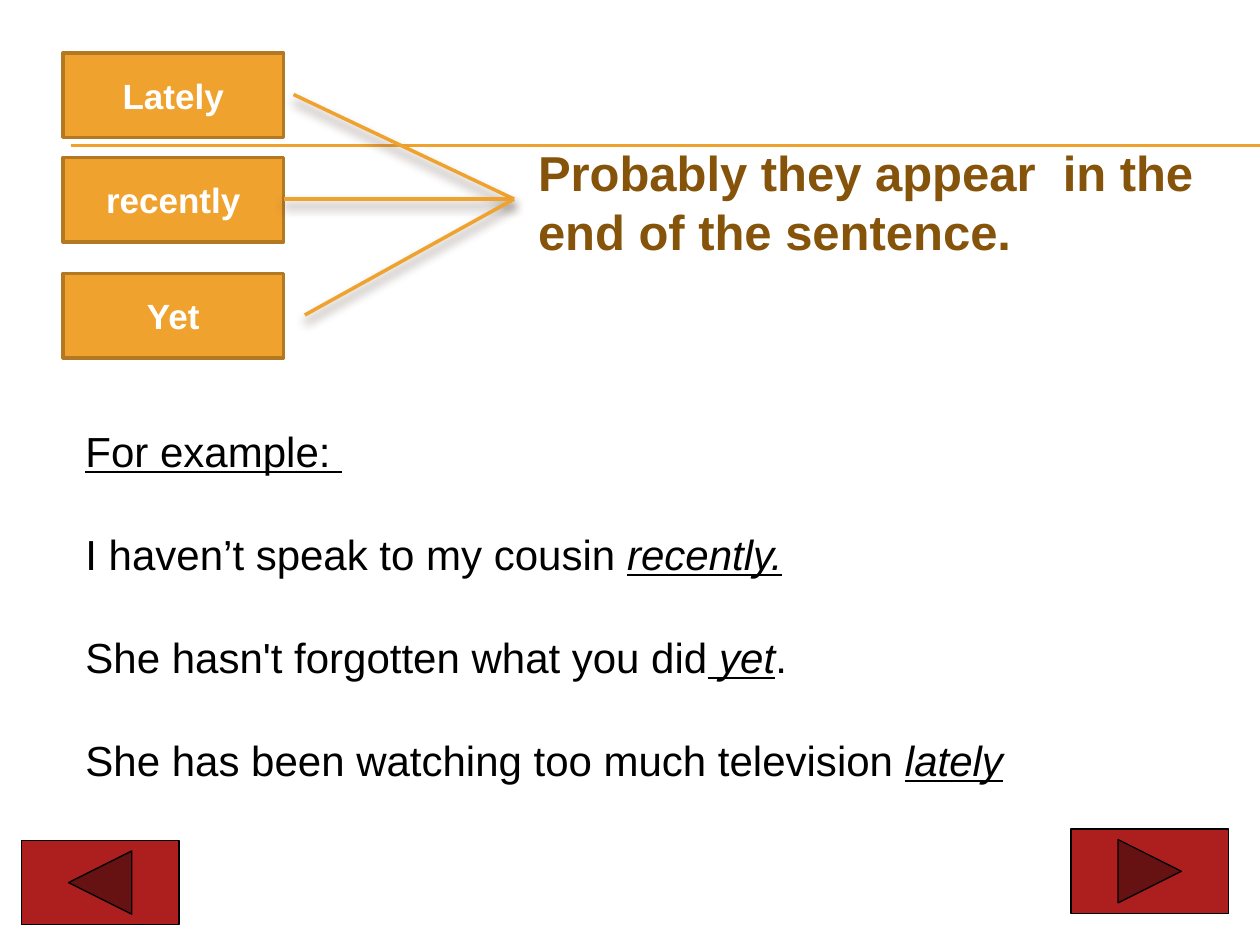
from lxml import etree
from pptx import Presentation
from pptx.dml.color import RGBColor
from pptx.enum.shapes import MSO_CONNECTOR, MSO_SHAPE
from pptx.enum.text import MSO_ANCHOR, PP_ALIGN
from pptx.oxml.ns import qn
from pptx.util import Inches, Pt

STRAIGHT = MSO_CONNECTOR.STRAIGHT
RECTANGLE = MSO_SHAPE.RECTANGLE
NEXT_BUTTON = MSO_SHAPE.ACTION_BUTTON_FORWARD_OR_NEXT
BACK_BUTTON = MSO_SHAPE.ACTION_BUTTON_BACK_OR_PREVIOUS
TOP, MIDDLE = MSO_ANCHOR.TOP, MSO_ANCHOR.MIDDLE
LEFT, CENTER = PP_ALIGN.LEFT, PP_ALIGN.CENTER

ORANGE = RGBColor(0xF0, 0xA2, 0x2E)
DARK_ORANGE = RGBColor(0xB2, 0x78, 0x22)
BROWN = RGBColor(0x85, 0x54, 0x0A)
SHADOW = RGBColor(0x4E, 0x3B, 0x30)
RED = RGBColor(0xAD, 0x1F, 0x1F)
BLACK = RGBColor(0, 0, 0)
WHITE = RGBColor(0xFF, 0xFF, 0xFF)

EMPHASIS = {"italic": True, "underline": True}
EXAMPLES = [
    [("For example: ", {"underline": True})],
    [("I haven’t speak to my cousin ", {}), ("recently.", EMPHASIS)],
    [("She hasn't forgotten what you did", {}), (" yet", EMPHASIS), (".", {})],
    [("She has been watching too much television ", {}), ("lately", EMPHASIS)],
]


def add_text(p, text, size, color, bold=False, italic=False, underline=False, align=LEFT):
    p.alignment = align
    r = p.add_run()
    r.text = text
    font = r.font
    font.name, font.size = "Arial", Pt(size)
    font.bold, font.italic, font.underline = bold, italic, underline
    font.color.rgb = color


def add_box(slide, kind, box, fill, line, width):
    sp = slide.shapes.add_shape(kind, *map(Inches, box))
    sp.shadow.inherit = False
    sp.fill.solid()
    sp.fill.fore_color.rgb = fill
    sp.line.color.rgb = line
    sp.line.width = Pt(width)
    return sp


def add_line(slide, start, end, width, shadow=False):
    line = slide.shapes.add_connector(STRAIGHT, *map(Inches, (*start, *end)))
    line.line.color.rgb = ORANGE
    line.line.width = Pt(width)
    effects = etree.SubElement(line._element.spPr, qn("a:effectLst"))
    if shadow:
        outer = etree.SubElement(effects, qn("a:outerShdw"), blurRad=str(Pt(6)),
                                 dist=str(Pt(4)), dir="5400000", rotWithShape="0")
        color = etree.SubElement(outer, qn("a:srgbClr"), val=str(SHADOW))
        etree.SubElement(color, qn("a:alpha"), val="60000")


def add_rule(slide, left, top, right):
    for y in (top, top + 0.01):
        add_line(slide, (left, y), (right, y), 0.75)


def add_adverbs(slide, left, width, height):
    """Stack the adverb boxes and join each one to the statement."""
    target = (4.08, 1.58)
    for word, top, start in (("Lately", 0.42, (2.33, 0.75)),
                             ("recently", 1.25, (2.25, 1.58)),
                             ("Yet", 2.17, (2.42, 2.5))):
        sp = add_box(slide, RECTANGLE, (left, top, width, height), ORANGE, DARK_ORANGE, 2)
        tf = sp.text_frame
        tf.vertical_anchor = MIDDLE
        add_text(tf.paragraphs[0], word, 20, WHITE, bold=True, align=CENTER)
        add_line(slide, start, target, 2, shadow=True)


def add_title(slide, left, top, width, height):
    title = slide.shapes.title
    title.left, title.top = Inches(left), Inches(top)
    title.width, title.height = Inches(width), Inches(height)
    tf = title.text_frame
    tf.word_wrap = True
    tf.vertical_anchor = TOP
    add_text(tf.paragraphs[0], "Probably they appear  in the end of the sentence.",
             28, BROWN, bold=True)


def add_examples(slide, left, top, width, height):
    sp = slide.shapes.add_textbox(*map(Inches, (left, top, width, height)))
    tf = sp.text_frame
    tf.word_wrap = True
    for i, runs in enumerate(EXAMPLES):
        p = tf.add_paragraph() if i else tf.paragraphs[0]
        p.space_before = Pt(30 if i else 0)
        for text, style in runs:
            add_text(p, text, 24, BLACK, **style)


def add_navigation(slide, width, height):
    for kind, left, top in ((NEXT_BUTTON, 8.5, 6.58), (BACK_BUTTON, 0.17, 6.67)):
        add_box(slide, kind, (left, top, width, height), RED, BLACK, 0.75)


def main():
    prs = Presentation()
    prs.slide_width, prs.slide_height = Inches(10), Inches(7.5)
    slide = prs.slides.add_slide(prs.slide_layouts[5])
    add_rule(slide, 0.56, 1.15, 10)
    add_adverbs(slide, 0.5, 1.75, 0.67)
    add_title(slide, 4.17, 1.08, 5.67, 1.04)
    add_examples(slide, 0.58, 3.33, 8.92, 2.93)
    add_navigation(slide, 1.25, 0.67)
    prs.save("out.pptx")


if __name__ == "__main__":
    main()
